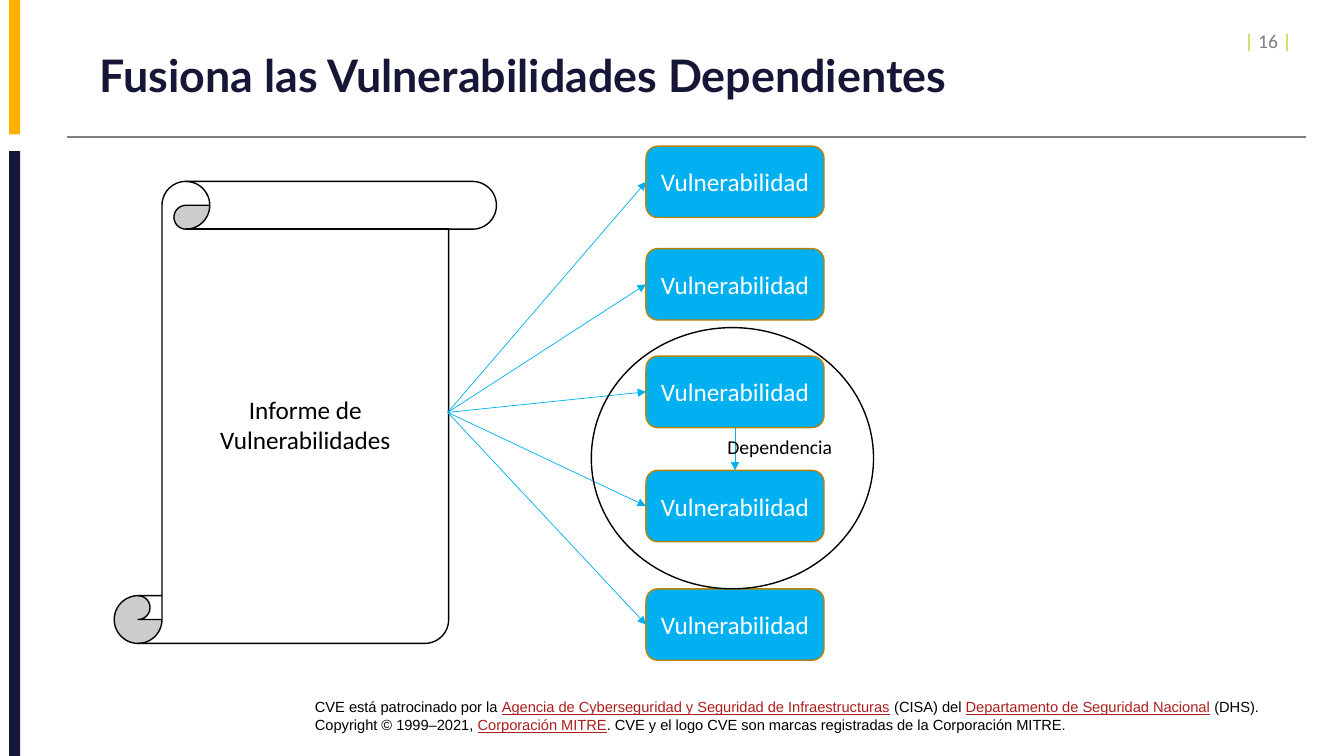
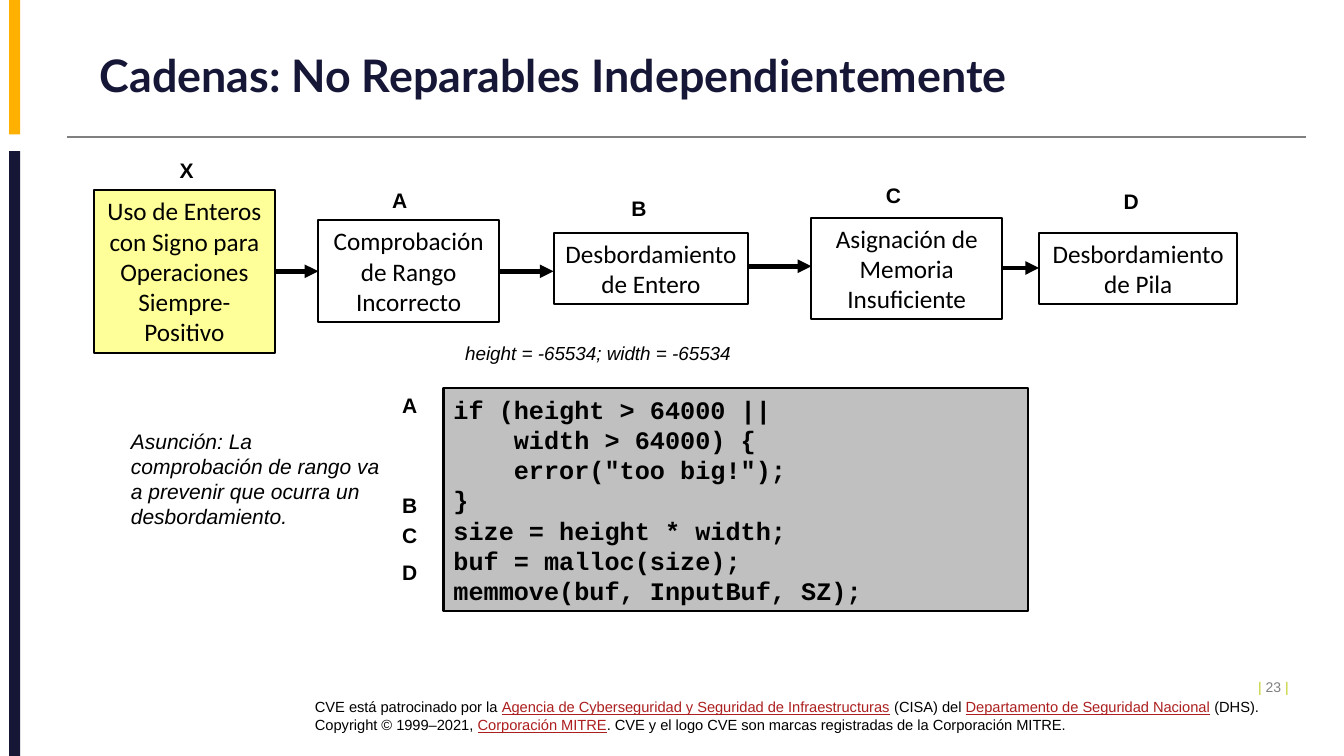
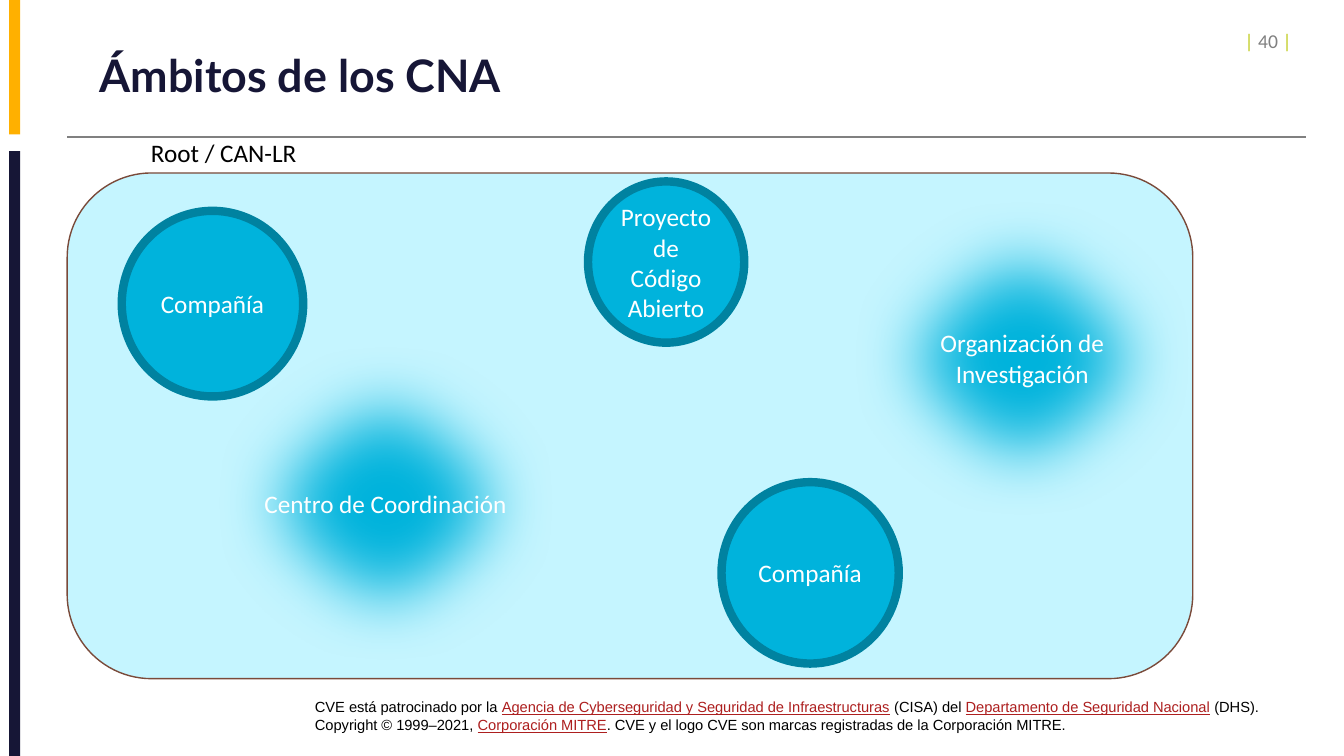
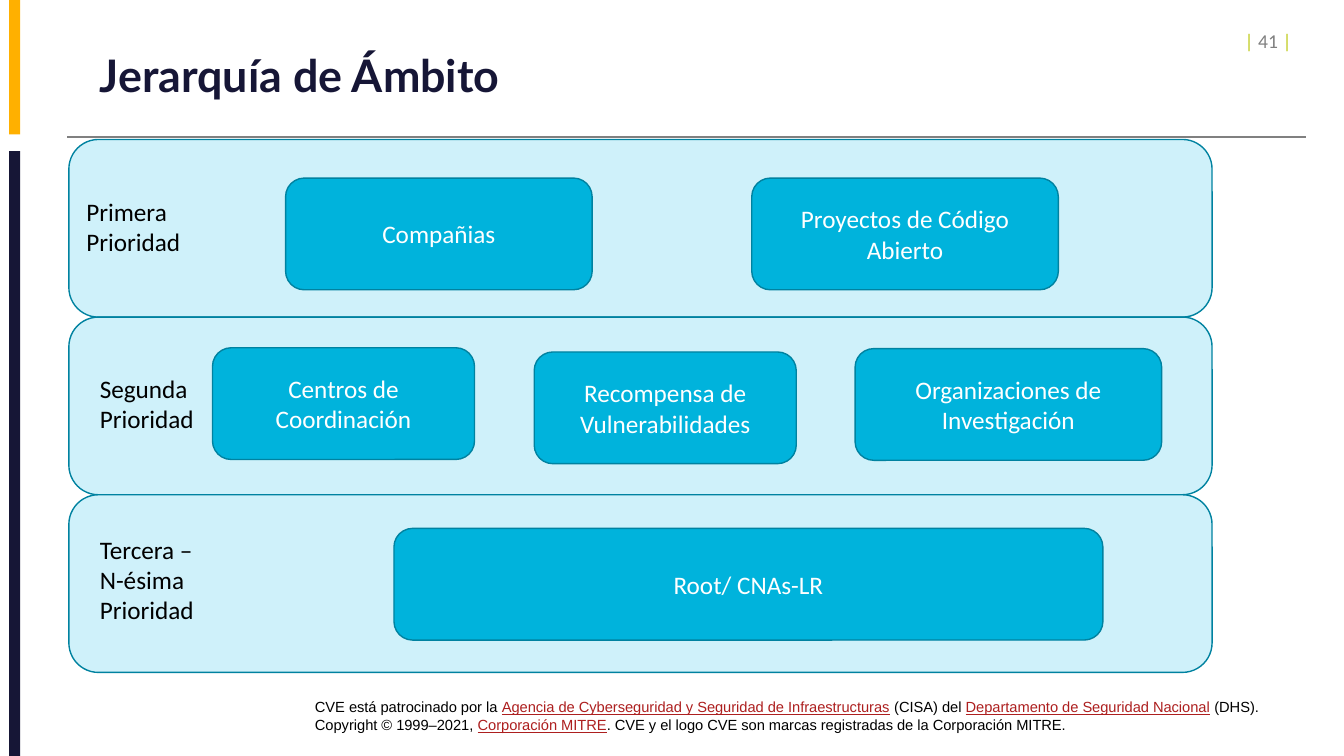
import lxml.etree
import pptx
import pptx.dml.color
import pptx.enum.shapes
import pptx.enum.text
import pptx.oxml.ns
import pptx.util

RGBColor = pptx.dml.color.RGBColor
Shape = pptx.enum.shapes.MSO_SHAPE
Align = pptx.enum.text.PP_ALIGN
Anchor = pptx.enum.text.MSO_ANCHOR
qn = pptx.oxml.ns.qn

# Palette
BLACK = RGBColor(0x00, 0x00, 0x00)
WHITE = RGBColor(0xFF, 0xFF, 0xFF)
NAVY = RGBColor(0x16, 0x16, 0x36)
AMBER = RGBColor(0xFF, 0xB0, 0x00)
GRAY = RGBColor(0x80, 0x80, 0x80)
LIME = RGBColor(0xC1, 0xCD, 0x23)
LINK_RED = RGBColor(0xAD, 0x1F, 0x1F)
SKY = RGBColor(0x00, 0xB0, 0xF0)
OCHRE = RGBColor(0xBD, 0x82, 0x00)
CYAN = RGBColor(0x00, 0xB3, 0xDC)
TEAL = RGBColor(0x00, 0x82, 0xA0)
PALE_CYAN = RGBColor(0xC5, 0xF5, 0xFF)
MIST = RGBColor(0xCF, 0xF1, 0xFA)
BROWN = RGBColor(0x7A, 0x4A, 0x3A)
YELLOW = RGBColor(0xFF, 0xFF, 0x99)
SILVER = RGBColor(0xC0, 0xC0, 0xC0)

# Grid of 160 columns by 90 rows, with square cells
COLUMNS, ROWS = 160, 90
CELL = pptx.util.Inches(7.5) // ROWS

SPONSOR = [
    ("CVE está patrocinado por la ", {}),
    ("Agencia de Cyberseguridad y Seguridad de Infraestructuras",
     {"color": LINK_RED, "underline": True}),
    (" (CISA) del ", {}),
    ("Departamento de Seguridad Nacional", {"color": LINK_RED, "underline": True}),
    (" (DHS). Copyright © 1999–2021, ", {}),
    ("Corporación MITRE", {"color": LINK_RED, "underline": True}),
    (". CVE y el logo CVE son marcas registradas de la Corporación MITRE.", {}),
]


def cells(*counts):
    """Turn grid counts into slide lengths."""
    return [round(count * CELL) for count in counts]


def write(frame, text, align=Align.LEFT, spacing=None, **style):
    """Fill a frame; each line is a string or a list of (words, style) runs."""
    lines = text.split("\n") if isinstance(text, str) else [text]
    for number, line in enumerate(lines):
        paragraph = frame.add_paragraph() if number else frame.paragraphs[0]
        paragraph.alignment = align
        if spacing:
            paragraph.line_spacing = spacing
        for words, changes in [(line, {})] if isinstance(line, str) else line:
            look = {"font": "Calibri", "size": 18, "color": BLACK, **style, **changes}
            run = paragraph.add_run()
            run.text = words
            run.font.name = look["font"]
            run.font.size = pptx.util.Pt(look["size"])
            run.font.color.rgb = look["color"]
            run.font.bold = look.get("bold")
            run.font.italic = look.get("italic")
            run.font.underline = look.get("underline")


class Deck:
    """The shared style and the slide being drawn."""

    def __init__(self):
        self.show = pptx.Presentation()
        self.show.slide_width, self.show.slide_height = cells(COLUMNS, ROWS)
        self.slide = None

    def start(self, title):
        self.slide = self.show.slides.add_slide(self.show.slide_layouts[6])
        self.box(Shape.RECTANGLE, (1.1, 0, 1.3, 16), fill=AMBER)
        self.box(Shape.RECTANGLE, (1.1, 18, 1.3, 72), fill=NAVY)
        self.line((8, 16.3), (155.5, 16.3), GRAY, 1)
        self.text(SPONSOR, (36.9, 82.5, 115.2, 5.4), inset=0.6,
                  font="Arial", size=10.5)
        self.text(title, (10.7, 3.6, 122.4, 11.4), anchor=Anchor.MIDDLE,
                  spacing=0.9, font="Lato", size=32, color=NAVY, bold=True)

    def number(self, value, place=(147, 2.9, 8.6, 4.4), size=14, **style):
        marks = [("| ", {}), (f"{value} ", {"color": GRAY}), ("|", {})]
        self.text(marks, place, size=size, color=LIME, **style)

    def text(self, text, place, wrap=True, anchor=Anchor.TOP, inset=None, **style):
        frame = self.slide.shapes.add_textbox(*cells(*place)).text_frame
        frame.word_wrap = wrap
        if not wrap:
            frame.auto_size = pptx.enum.text.MSO_AUTO_SIZE.SHAPE_TO_FIT_TEXT
        frame.vertical_anchor = anchor
        if inset is not None:
            frame.margin_left, frame.margin_top = cells(inset, inset)
            frame.margin_right, frame.margin_bottom = cells(inset, inset)
        write(frame, text, **style)

    def box(self, kind, place, text="", fill=None, outline=None, weight=1,
            soft_edge=None, align=Align.CENTER, **style):
        shape = self.slide.shapes.add_shape(kind, *cells(*place))
        shape.shadow.inherit = False
        if fill is None:
            shape.fill.background()
        else:
            shape.fill.solid()
            shape.fill.fore_color.rgb = fill
        if outline is None:
            shape.line.fill.background()
        else:
            shape.line.color.rgb = outline
            shape.line.width = pptx.util.Pt(weight)
        if soft_edge:
            effects = shape.element.spPr.find(qn("a:effectLst"))
            lxml.etree.SubElement(effects, qn("a:softEdge"),
                                  rad=str(pptx.util.Pt(soft_edge)))
        if text:
            shape.text_frame.word_wrap = True
            shape.text_frame.vertical_anchor = Anchor.MIDDLE
            write(shape.text_frame, text, align=align, **style)
        return shape

    def line(self, start, end, color, weight, arrow=False):
        connector = self.slide.shapes.add_connector(
            pptx.enum.shapes.MSO_CONNECTOR.STRAIGHT, *cells(*start, *end))
        connector.line.color.rgb = color
        connector.line.width = pptx.util.Pt(weight)
        properties = connector.element.spPr
        if arrow:
            lxml.etree.SubElement(properties.find(qn("a:ln")), qn("a:tailEnd"),
                                  type="triangle")
        lxml.etree.SubElement(properties, qn("a:effectLst"))
        return connector


def merge_slide(deck):
    deck.start("Fusiona las Vulnerabilidades Dependientes")
    deck.box(Shape.VERTICAL_SCROLL, (13.6, 21.6, 45.5, 55),
             "Informe de Vulnerabilidades", fill=WHITE, outline=BLACK)
    left, width, height = 76.9, 21.2, 8.5
    tops = (17.4, 29.6, 42.4, 56, 70.1)
    flaws = [deck.box(Shape.ROUNDED_RECTANGLE, (left, top, width, height),
                      "Vulnerabilidad", fill=SKY, outline=OCHRE, color=WHITE)
             for top in tops]
    # Arrows from the report to each vulnerability
    for flaw, top in zip(flaws, tops):
        arrow = deck.line((53.3, 49.1), (left, top + height / 2), SKY, 0.5, True)
        arrow.end_connect(flaw, 1)
    # The dependent pair
    middle = left + width / 2
    dependency = deck.line((middle, tops[2] + height), (middle, tops[3]),
                           SKY, 0.5, True)
    dependency.begin_connect(flaws[2], 2)
    dependency.end_connect(flaws[3], 0)
    deck.text("Dependencia", (85.4, 51.2, 15, 4.1), wrap=False, size=14)
    deck.box(Shape.OVAL, (70.4, 39, 33.6, 31.1), outline=BLACK)
    deck.number(16)


def chain_slide(deck):
    deck.start("Cadenas: No Reparables Independientemente")
    deck.number(23, (146, 81, 8.6, 2.4), size=10, font="Arial",
                align=Align.RIGHT, anchor=Anchor.BOTTOM)
    # Chain of weaknesses: letter, its corner, text, box, fill
    steps = [
        ("X", (20.2, 18.2), "Uso de Enteros con Signo para Operaciones Siempre-Positivo",
         (11.2, 22.6, 21.5, 19.4), YELLOW),
        ("A", (45.5, 21.7), "Comprobación de Rango Incorrecto",
         (37.9, 26.2, 21.5, 12.1), None),
        ("B", (74, 22.7), "Desbordamiento\nde Entero", (65.9, 27.7, 23.2, 8.5), None),
        ("C", (104.3, 21.1), "Asignación de Memoria Insuficiente",
         (96.6, 25.9, 22.7, 12.1), None),
        ("D", (132.6, 21.8), "Desbordamiento de Pila",
         (123.7, 27.7, 23.6, 8.5), None),
    ]
    letters = [(letter, corner) for letter, corner, *_ in steps]
    for _, _, weakness, place, fill in steps:
        deck.box(Shape.RECTANGLE, place, weakness, fill=fill, outline=BLACK, weight=1.5)
    for before, after, row in zip(steps, steps[1:], (32.3, 32.3, 31.7, 31.9)):
        left, _, width, _ = before[3]
        deck.line((left + width, row), (after[3][0], row), BLACK, 3.25, True)
    # Code and the lines where each weakness appears
    code = ("if (height > 64000 ||\n"
            "    width > 64000) {\n"
            "    error(\"too big!\");\n"
            "}\n"
            "size = height * width;\n"
            "buf = malloc(size);\n"
            "memmove(buf, InputBuf, SZ);")
    deck.box(Shape.RECTANGLE, (52.8, 46.2, 69.6, 26.6), code, fill=SILVER,
             outline=BLACK, weight=1.5, align=Align.LEFT, font="Courier New", bold=True)
    letters += [(letter, (46.7, top))
                for letter, top in zip("ABCD", (46.1, 58.1, 61.6, 66))]
    for letter, corner in letters:
        deck.text(letter, (*corner, 5.8, 4.8), wrap=False,
                  font="Arial", size=15, bold=True)
    deck.text("height = -65534; width = -65534", (54.2, 40.1, 49.1, 4.6),
              font="Arial", size=13.5, italic=True)
    deck.text("Asunción: La comprobación de rango va a prevenir que ocurra un desbordamiento.",
              (14.4, 50.4, 32.3, 13.3), font="Arial", size=15, italic=True)


def scope_slide(deck):
    deck.start("Ámbitos de los CNA")
    deck.box(Shape.ROUNDED_RECTANGLE, (8, 20.6, 134, 60.2),
             fill=PALE_CYAN, outline=BROWN)
    # Scopes with a clear limit
    for scope, place in [
        ("Compañía", (14.5, 25.1, 21.6, 22.1)),
        ("Proyecto de Código Abierto", (70, 21.6, 18.6, 19.2)),
        ("Compañía", (85.9, 57.4, 21.1, 21.6)),
    ]:
        deck.box(Shape.OVAL, place, scope, fill=CYAN, outline=TEAL, weight=6, color=WHITE)
    # Scopes with a blurred limit
    for scope, corner in [
        ("Organización de Investigación", (99, 21.6)),
        ("Centro de Coordinación", (23.2, 38.9)),
    ]:
        deck.box(Shape.OVAL, (*corner, 45.4, 42), scope, fill=CYAN,
                 soft_edge=50, color=WHITE)
    deck.text("Root / CAN-LR", (16.8, 15.8, 19.9, 4.8), wrap=False)
    deck.number(40)


def hierarchy_slide(deck):
    deck.start("Jerarquía de Ámbito")
    # Each level: label, its place, members as (text, left, top, width)
    levels = [
        ("Primera\nPrioridad", (9.1, 22.8, 13.7, 8.5),
         [("Compañias", 34, 21.2, 36.5),
          ("Proyectos de Código Abierto", 89.5, 21.2, 36.5)]),
        ("Segunda\nPrioridad", (10.7, 43.8, 13.7, 8.5),
         [("Centros de Coordinación", 25.3, 41.4, 31.2),
          ("Recompensa de Vulnerabilidades", 63.6, 41.9, 31.2),
          ("Organizaciones de Investigación", 101.8, 41.5, 36.5)]),
        ("Tercera –\nN-ésima\nPrioridad", (10.7, 63, 13.6, 12.1),
         [("Root/ CNAs-LR", 46.9, 62.9, 84.4)]),
    ]
    band_height = 21.15
    for index, (label, place, members) in enumerate(levels):
        deck.box(Shape.ROUNDED_RECTANGLE,
                 (8.2, 16.6 + index * band_height, 136.1, band_height),
                 fill=MIST, outline=TEAL)
        deck.text(label, place, wrap=False)
        for member, left, top, width in members:
            deck.box(Shape.ROUNDED_RECTANGLE, (left, top, width, 13.3), member,
                     fill=CYAN, outline=TEAL, color=WHITE)
    deck.number(41)


def main():
    deck = Deck()
    for build in (merge_slide, chain_slide, scope_slide, hierarchy_slide):
        build(deck)
    deck.show.save("out.pptx")


if __name__ == "__main__":
    main()
